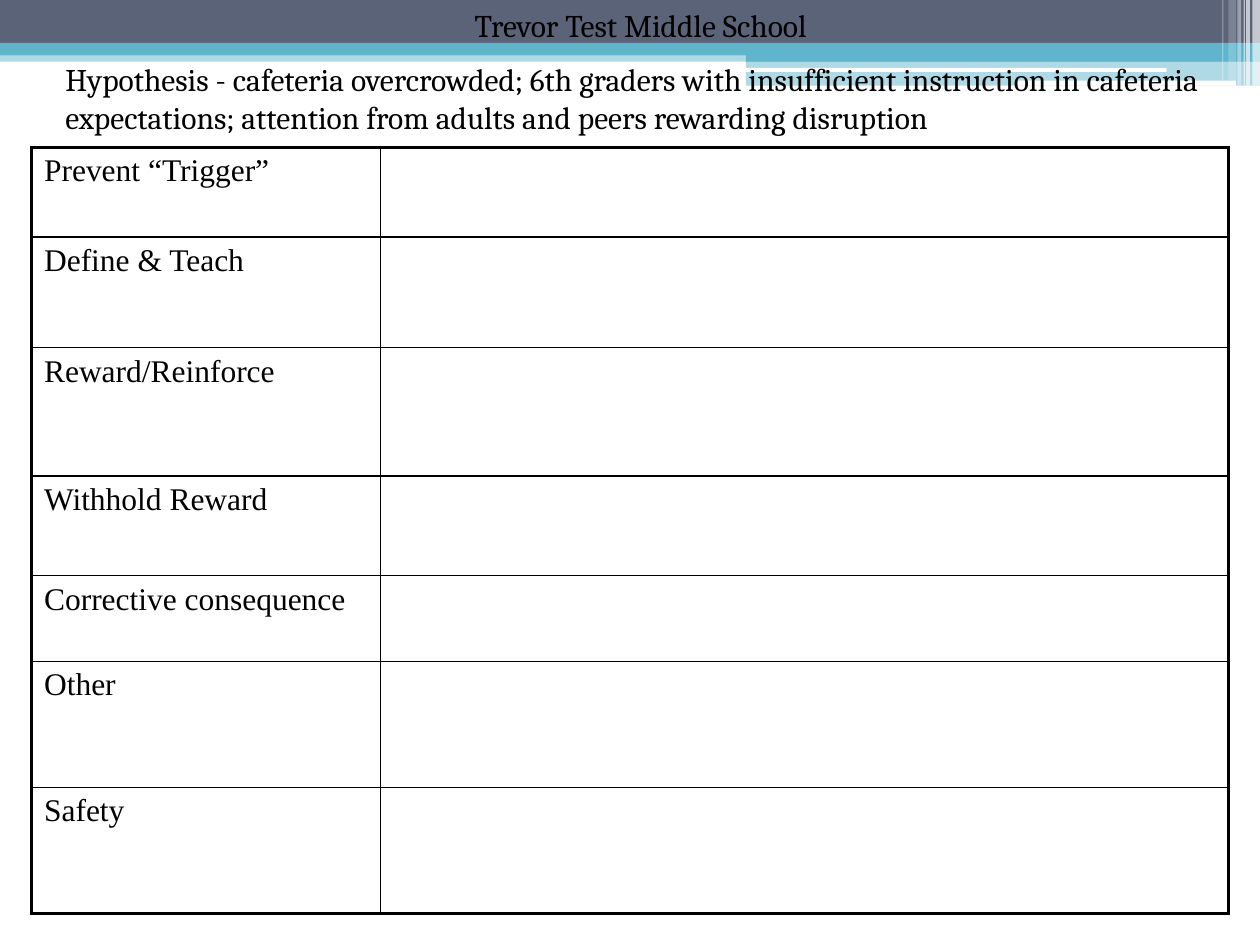
from dataclasses import dataclass

from lxml import etree
from pptx import Presentation
from pptx import util as u
from pptx.dml.color import RGBColor
from pptx.enum import shapes, text
from pptx.oxml.ns import qn


@dataclass(frozen=True)
class Theme:
    black: str = "000000"
    white: str = "FFFFFF"
    slate: str = "5A6378"
    teal: str = "60B5CC"
    heading_font: str = "Cambria"
    table_font: str = "Times New Roman"
    size: int = 18
    thin: float = 1
    thick: float = 2.25


class SlideBuilder:
    def __init__(self, slide, theme):
        self.s = slide
        self.theme = theme

    def bar(self, left, top, width, height, color, opacity=100, rounded=False):
        kind = shapes.MSO_SHAPE.ROUNDED_RECTANGLE if rounded else shapes.MSO_SHAPE.RECTANGLE
        sp = self.s.shapes.add_shape(kind, *map(u.Inches, (left, top, width, height)))
        sp.shadow.inherit = False
        sp.line.fill.background()
        sp.fill.solid()
        sp.fill.fore_color.rgb = RGBColor.from_string(color)
        if opacity < 100:
            clr = sp.element.spPr.find(qn("a:solidFill")).find(qn("a:srgbClr"))
            etree.SubElement(clr, qn("a:alpha"), val=str(opacity * 1000))

    def fill_paragraph(self, p, words, font, **paragraph_format):
        for name, value in paragraph_format.items():
            setattr(p, name, value)
        r = p.add_run()
        r.text = words
        for name, value in {"name": font, "size": u.Pt(self.theme.size)}.items():
            setattr(r.font, name, value)
        r.font.color.rgb = RGBColor.from_string(self.theme.black)

    def text_box(self, left, top, width, height, paragraphs):
        sp = self.s.shapes.add_textbox(*map(u.Inches, (left, top, width, height)))
        tf = sp.text_frame
        tf.word_wrap = True
        tf.auto_size = text.MSO_AUTO_SIZE.SHAPE_TO_FIT_TEXT
        for i, (words, fmt) in enumerate(paragraphs):
            p = tf.add_paragraph() if i else tf.paragraphs[0]
            self.fill_paragraph(p, words, self.theme.heading_font, **fmt)

    def borders(self, cell, widths):
        tc_pr = cell._tc.get_or_add_tcPr()
        for i, (side, width) in enumerate(widths.items()):
            ln = etree.Element(qn("a:ln" + side), w=str(int(u.Pt(width))))
            fill = etree.SubElement(ln, qn("a:solidFill"))
            etree.SubElement(fill, qn("a:srgbClr"), val=self.theme.black)
            tc_pr.insert(i, ln)

    def table(self, left, top, col_widths, rows):
        t = self.theme
        size = (sum(col_widths), sum(height for _, height in rows))
        table = self.s.shapes.add_table(
            len(rows), len(col_widths), *map(u.Inches, (left, top, *size))).table
        table.first_row = table.horz_banding = False
        for col, width in zip(table.columns, col_widths):
            col.width = u.Inches(width)
        last_row, last_col = len(rows) - 1, len(col_widths) - 1
        for i, (label, height) in enumerate(rows):
            table.rows[i].height = u.Inches(height)
            p = table.cell(i, 0).text_frame.paragraphs[0]
            self.fill_paragraph(p, label, t.table_font)
            for j in range(len(col_widths)):
                cell = table.cell(i, j)
                cell.fill.background()
                # Thick frame outside, thin rules inside
                outer = {"L": j == 0, "R": j == last_col, "T": i == 0, "B": i == last_row}
                self.borders(cell, {k: t.thick if edge else t.thin for k, edge in outer.items()})


def main():
    prs = Presentation()
    prs.slide_width, prs.slide_height = u.Inches(10), u.Inches(7.5)
    theme = Theme()
    b = SlideBuilder(prs.slides.add_slide(prs.slide_layouts[6]), theme)

    # Header bands
    b.bar(0, 0.4, 10, 0.09, theme.teal, 50)
    b.bar(0, 0, 10, 0.34, theme.slate)
    b.bar(0, 0.34, 10, 0.1, theme.teal)
    b.bar(5.92, 0.39, 4.08, 0.1, theme.teal)
    b.bar(5.92, 0.48, 4.08, 0.2, theme.teal, 50)
    b.bar(5.91, 0.54, 3.35, 0.03, theme.white, rounded=True)
    b.bar(8.06, 0.64, 1.75, 0.04, theme.white, rounded=True)

    # Pale vertical stripes at the right: left, width, height, opacity
    for left, width, height, opacity in (
        (9.94, 0.06, 0.68, 65), (9.89, 0.03, 0.68, 65), (9.87, 0.01, 0.68, 60),
        (9.82, 0.03, 0.68, 40), (9.75, 0.06, 0.64, 20), (9.7, 0.01, 0.64, 30),
    ):
        b.bar(left, 0, width, height, theme.white, opacity)

    # Plan table
    b.table(0.25, 1.17, (2.77, 6.73), (
        ("Prevent “Trigger”", 0.71),
        ("Define & Teach", 0.88),
        ("Reward/Reinforce", 1.02),
        ("Withhold Reward", 0.79),
        ("Corrective consequence", 0.68),
        ("Other", 1),
        ("Safety", 1),
    ))

    # School name and hypothesis
    b.text_box(0.42, 0, 9.33, 1.15, (
        ("Trevor Test Middle School", {"alignment": text.PP_ALIGN.CENTER}),
        ("Hypothesis - cafeteria overcrowded; 6th graders with insufficient instruction "
         "in cafeteria expectations; attention from adults and peers rewarding disruption",
         {"space_before": u.Pt(theme.size / 2)}),
    ))

    prs.save("out.pptx")


if __name__ == "__main__":
    main()
